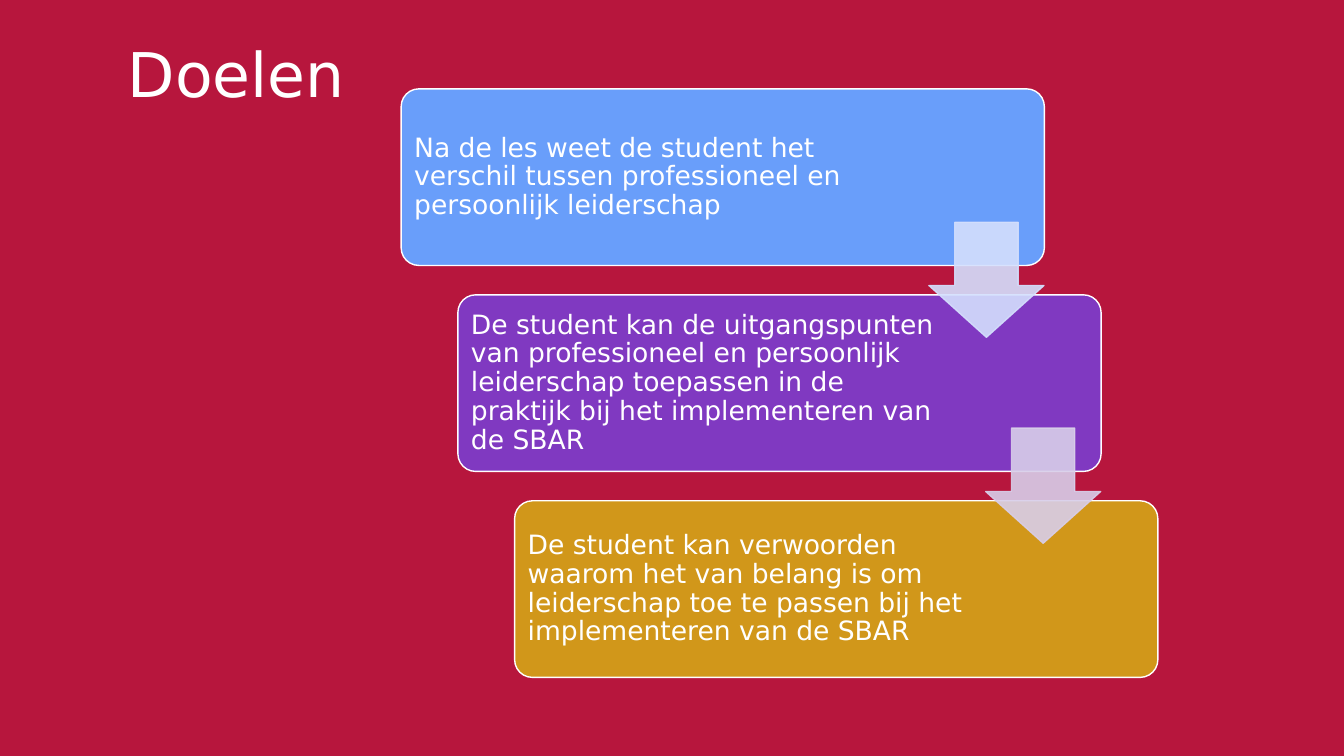
from lxml import etree
from pptx import Presentation
from pptx.dml.color import RGBColor
from pptx.enum.shapes import MSO_SHAPE
from pptx.enum.text import MSO_ANCHOR, PP_ALIGN
from pptx.oxml.ns import qn
from pptx.util import Cm, Pt

ROUNDED, DOWN_ARROW = MSO_SHAPE.ROUNDED_RECTANGLE, MSO_SHAPE.DOWN_ARROW
MIDDLE, LEFT = MSO_ANCHOR.MIDDLE, PP_ALIGN.LEFT
FONT = "DejaVu Sans"
COLOURS = {
    "background": "B7163D", "white": "FFFFFF",
    "blue": "699EFA", "purple": "8039C1", "gold": "D1971A",
    "pale blue": "D4DFFD", "pale purple": "D8CEE9",
}

TITLE = "Doelen"
# Text, fill colour, right text margin in cm
GOALS = [
    ("Na de les weet de student het verschil tussen professioneel en "
     "persoonlijk leiderschap", "blue", 4.78),
    ("De student kan de uitgangspunten van professioneel en persoonlijk "
     "leiderschap toepassen in de praktijk bij het implementeren van de SBAR",
     "purple", 3.76),
    ("De student kan verwoorden waarom het van belang is om leiderschap toe "
     "te passen bij het implementeren van de SBAR", "gold", 4.55),
]
ARROW_COLOURS = ["pale blue", "pale purple"]

# Lengths in cm
FIRST_LEFT, FIRST_TOP = 10.11, 2.24
STEP_RIGHT, STEP_DOWN = 1.43, 5.19
GOAL_WIDTH, GOAL_HEIGHT = 16.21, 4.45
ARROW_RIGHT, ARROW_DOWN, ARROW_SIZE = 13.3, 3.36, 2.9
MARGIN = 0.2


def colour(name):
    return RGBColor.from_string(COLOURS[name])


def write(shape, text, size, space_after=0):
    frame = shape.text_frame
    frame.word_wrap = True
    frame.vertical_anchor = MIDDLE
    para = frame.paragraphs[0]
    para.alignment = LEFT
    para.line_spacing = 0.9
    para.space_after = Pt(space_after)
    span = para.add_run()
    span.text = text
    span.font.name = FONT
    span.font.size = Pt(size)
    span.font.color.rgb = colour("white")


def add_block(page, kind, place, fill, line, adjustments):
    block = page.shapes.add_shape(kind, *(Cm(length) for length in place))
    block.shadow.inherit = False
    block.fill.solid()
    block.fill.fore_color.rgb = colour(fill)
    block.line.color.rgb = colour(line)
    block.line.width = Pt(1)
    for index, value in enumerate(adjustments):
        block.adjustments[index] = value
    return block


def set_opacity(shape, percent):
    """Apply the same opacity to the fill and the outline."""
    for solid in shape.element.spPr.iter(qn("a:solidFill")):
        etree.SubElement(solid[0], qn("a:alpha"), val=str(percent * 1000))


def stair(step):
    return FIRST_LEFT + step * STEP_RIGHT, FIRST_TOP + step * STEP_DOWN


def main():
    deck = Presentation()
    deck.slide_width, deck.slide_height = Cm(33.87), Cm(19.05)
    page = deck.slides.add_slide(deck.slide_layouts[5])
    page.background.fill.solid()
    page.background.fill.fore_color.rgb = colour("background")

    title = page.shapes.title
    title.left, title.top = Cm(2.97), Cm(0.89)
    title.width, title.height = Cm(15.24), Cm(2.11)
    write(title, TITLE, 44)

    for step, (text, fill, right_margin) in enumerate(GOALS):
        place = (*stair(step), GOAL_WIDTH, GOAL_HEIGHT)
        box = add_block(page, ROUNDED, place, fill, "white", [0.1])
        frame = box.text_frame
        frame.margin_left = frame.margin_top = frame.margin_bottom = Cm(MARGIN)
        frame.margin_right = Cm(right_margin)
        write(box, text, 19, space_after=6.65)

    for step, tint in enumerate(ARROW_COLOURS):
        left, top = stair(step)
        place = (left + ARROW_RIGHT, top + ARROW_DOWN, ARROW_SIZE, ARROW_SIZE)
        # The arrow's adjustments are listed as shaft width, then head length
        arrow = add_block(page, DOWN_ARROW, place, tint, tint, [0.55, 0.45])
        set_opacity(arrow, 90)

    deck.save("out.pptx")


if __name__ == "__main__":
    main()
